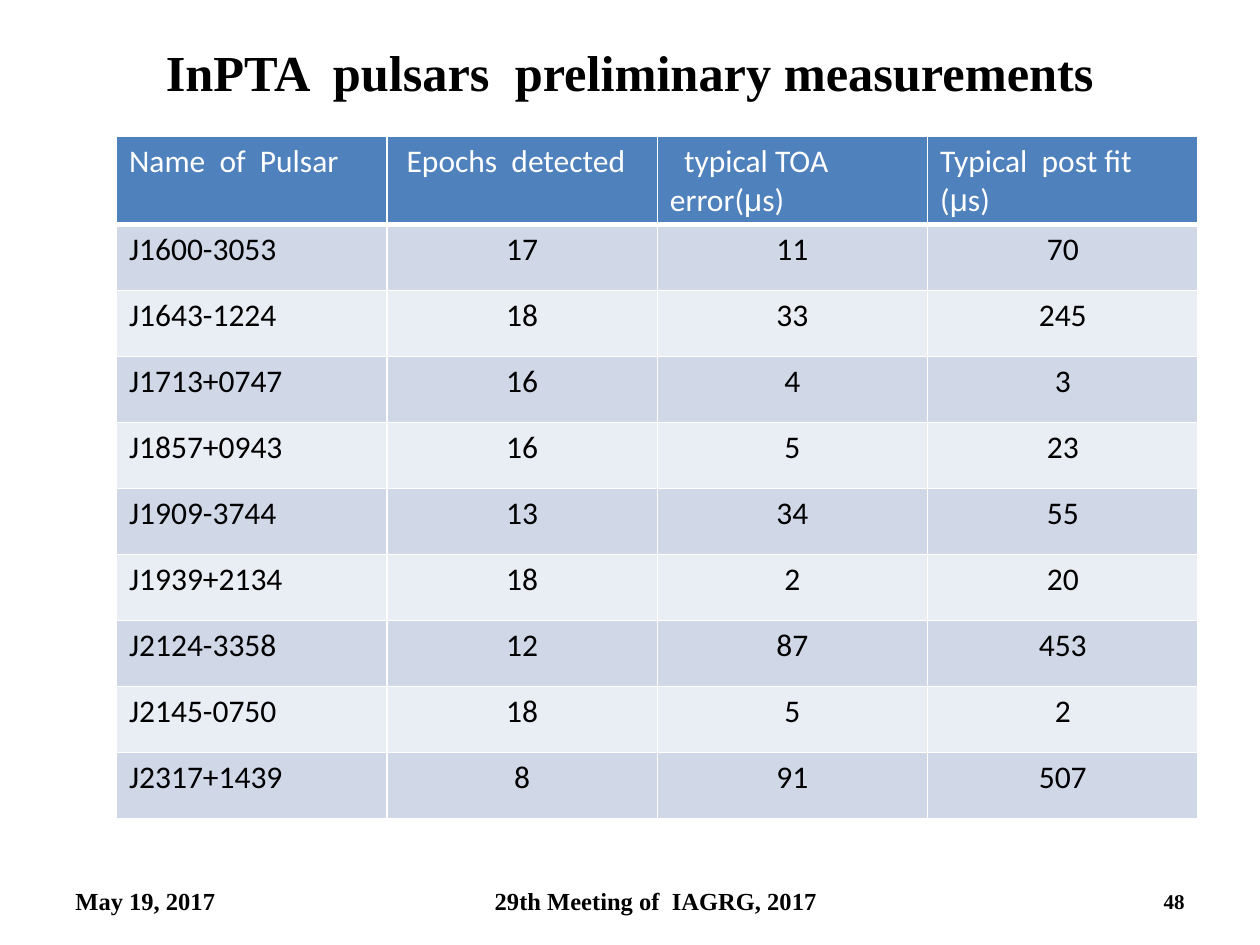
from lxml import etree
from pptx import Presentation
from pptx.dml.color import RGBColor
from pptx.enum.text import MSO_ANCHOR, PP_ALIGN
from pptx.oxml.ns import qn
from pptx.util import Cm, Pt

LEFT, CENTER, RIGHT = PP_ALIGN.LEFT, PP_ALIGN.CENTER, PP_ALIGN.RIGHT
MIDDLE = MSO_ANCHOR.MIDDLE
HEADER_FILL, BANDS = "4F81BD", ("D0D8E8", "E9EDF4")
WHITE, BLACK = "FFFFFF", "000000"


def style_font(font, name, size, color, bold):
    font.name, font.size, font.bold = name, Pt(size), bold
    font.color.rgb = RGBColor.from_string(color)


def add_border(cell, side, width):
    """Draw a white line on one side of a cell: L, R, T or B."""
    line = etree.SubElement(cell._tc.get_or_add_tcPr(), qn(f"a:ln{side}"), w=str(Pt(width)))
    fill = etree.SubElement(line, qn("a:solidFill"))
    etree.SubElement(fill, qn("a:srgbClr"), val=WHITE)


deck = Presentation()
deck.slide_width, deck.slide_height = Cm(25.4), Cm(19.05)
page = deck.slides.add_slide(deck.slide_layouts[6])

# Title and footer: text, left, top, width, height, size, alignment
FOOTER_TOP, FOOTER_HEIGHT = 17.65, 1.02
labels = [
    ("InPTA  pulsars  preliminary measurements", 1.27, 0.76, 22.86, 1.35, 28.8, CENTER),
    ("29th Meeting of  IAGRG, 2017", 6.55, FOOTER_TOP, 13.34, FOOTER_HEIGHT, 14, CENTER),
    ("May 19, 2017", 1.27, FOOTER_TOP, 4.65, FOOTER_HEIGHT, 14, LEFT),
    ("48", 20.95, FOOTER_TOP, 3.18, FOOTER_HEIGHT, 12, RIGHT),
]
for text, left, top, width, height, size, alignment in labels:
    box = page.shapes.add_textbox(Cm(left), Cm(top), Cm(width), Cm(height))
    frame = box.text_frame
    frame.word_wrap, frame.vertical_anchor = True, MIDDLE
    para = frame.paragraphs[0]
    para.text, para.alignment = text, alignment
    style_font(para.font, "Times New Roman", size, BLACK, True)

# Pulsar measurements
rows = [
    ("Name  of  Pulsar", " Epochs  detected", "  typical TOA  error(μs)", "Typical  post fit (μs)"),
    ("J1600-3053", 17, 11, 70),
    ("J1643-1224", 18, 33, 245),
    ("J1713+0747", 16, 4, 3),
    ("J1857+0943", 16, 5, 23),
    ("J1909-3744", 13, 34, 55),
    ("J1939+2134", 18, 2, 20),
    ("J2124-3358", 12, 87, 453),
    ("J2145-0750", 18, 5, 2),
    ("J2317+1439", 8, 91, 507),
]
COLUMN_WIDTH, ROW_HEIGHT = 5.45, 1.33
table = page.shapes.add_table(
    len(rows), len(rows[0]), Cm(2.35), Cm(2.75),
    Cm(COLUMN_WIDTH * len(rows[0])), Cm(ROW_HEIGHT * len(rows)),
).table
for column in table.columns:
    column.width = Cm(COLUMN_WIDTH)

for r, values in enumerate(rows):
    table.rows[r].height = Cm(ROW_HEIGHT)
    header = r == 0
    for c, value in enumerate(values):
        cell = table.cell(r, c)
        for side in "LRTB":
            add_border(cell, side, 3 if header and side == "B" else 1)
        cell.fill.solid()
        cell.fill.fore_color.rgb = RGBColor.from_string(HEADER_FILL if header else BANDS[(r - 1) % 2])
        para = cell.text_frame.paragraphs[0]
        para.alignment = LEFT if header or c == 0 else CENTER
        color = WHITE if header else BLACK
        before, mu, after = str(value).partition("μ")
        for text, font_name in ((before, "Calibri"), (mu, "Arial"), (after, "Calibri")):
            if text:
                span = para.add_run()
                span.text = text
                style_font(span.font, font_name, 18, color, False)

deck.save("out.pptx")
